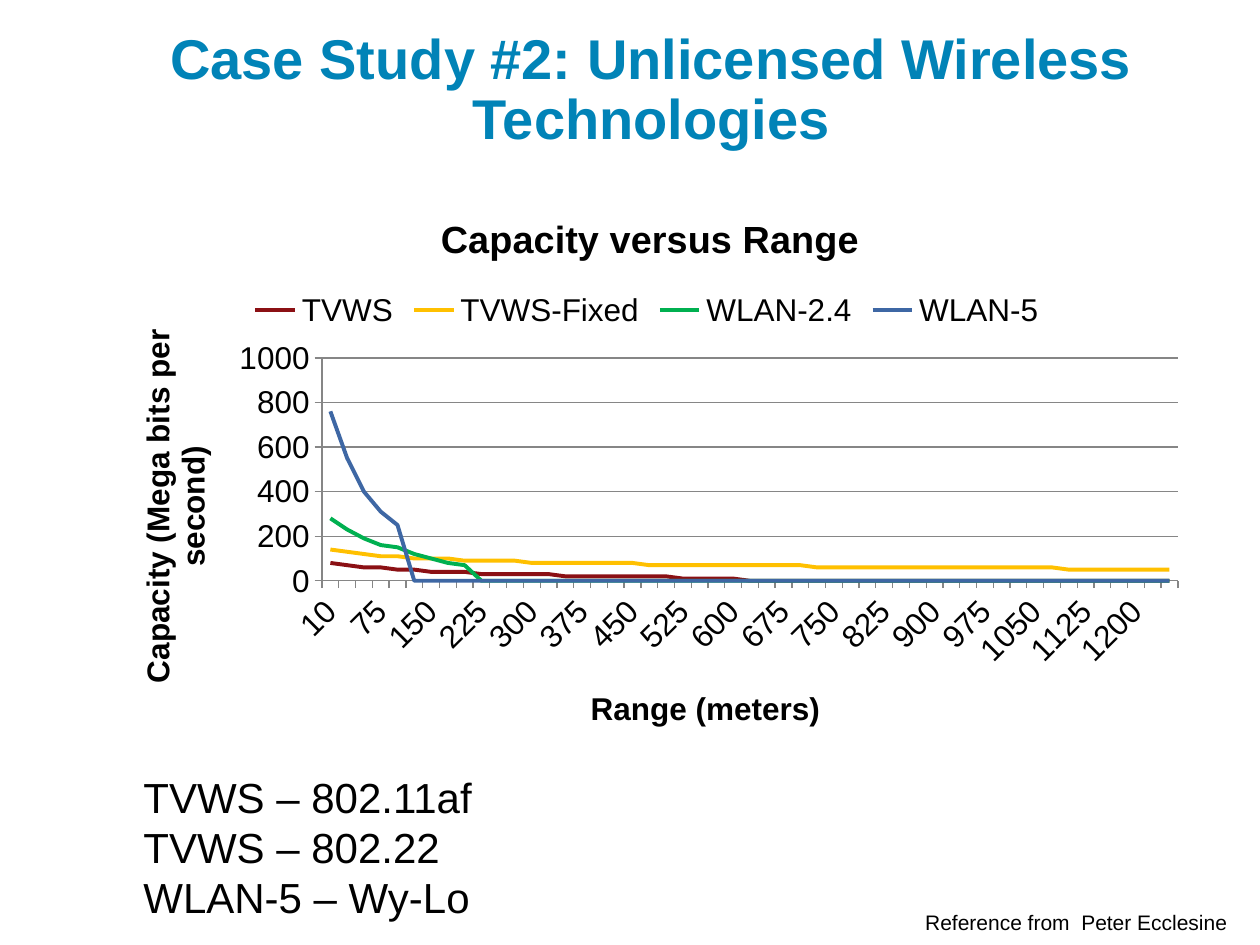
from dataclasses import dataclass

from lxml import etree
from pptx import Presentation
from pptx.chart.data import CategoryChartData
from pptx.dml.color import RGBColor
from pptx.enum.chart import XL_CHART_TYPE, XL_LEGEND_POSITION, XL_TICK_MARK
from pptx.enum.text import MSO_ANCHOR, MSO_AUTO_SIZE, PP_ALIGN
from pptx.oxml import parse_xml
from pptx.oxml.ns import qn
from pptx.util import Pt

LINE = XL_CHART_TYPE.LINE
TOP = XL_LEGEND_POSITION.TOP
OUT = XL_TICK_MARK.OUTSIDE
LEFT, CENTER = PP_ALIGN.LEFT, PP_ALIGN.CENTER
HIGH, LOW = MSO_ANCHOR.TOP, MSO_ANCHOR.BOTTOM
GROW, FIXED = MSO_AUTO_SIZE.SHAPE_TO_FIT_TEXT, MSO_AUTO_SIZE.NONE

DPI = 126
FONT = "Arial"
BLACK = "000000"
BLUE = "0183B7"
GRID = "868686"
STEPS = 51


@dataclass
class Label:
    box: tuple[int, int, int, int]
    text: str
    size: int
    color: str = BLACK
    bold: bool = False
    align: PP_ALIGN = LEFT
    anchor: MSO_ANCHOR = HIGH
    wrap: bool = False
    pitch: float = 1.0


@dataclass
class Curve:
    name: str
    color: str
    vals: list[int]


LABELS = [
    Label((90, 42, 1123, 116), "Case Study #2: Unlicensed Wireless Technologies",
          32, BLUE, True, CENTER, LOW, True, 0.9),
    Label((131, 765, 357, 165), "TVWS – 802.11af\nTVWS – 802.22\nWLAN-5 – Wy-Lo", 24),
    Label((907, 903, 336, 38), " Reference from  Peter Ecclesine", 12),
]

CURVES = [
    Curve("TVWS", "8B1014", [80, 70, 60, 60, 50, 50] + [40] * 3 + [30] * 5
          + [20] * 7 + [10] * 4),
    Curve("TVWS-Fixed", "FFC000", [140, 130, 120, 110, 110] + [100] * 3 + [90] * 4
          + [80] * 7 + [70] * 10 + [60] * 15 + [50] * 7),
    Curve("WLAN-2.4", "00B050", [280, 230, 190, 160, 150, 120, 100, 80, 70]),
    Curve("WLAN-5", "3E67A4", [760, 550, 400, 310, 250]),
]

CHART = (106, 190, 1094, 566)


def px(n: int) -> int:
    return round(n * 914400 / DPI)


def rgb(code: str) -> RGBColor:
    return RGBColor.from_string(code)


def style(font, size: float, color: str = BLACK, bold: bool = False) -> None:
    font.name, font.size, font.bold = FONT, Pt(size), bold
    font.color.rgb = rgb(color)


def draw_label(slide, item: Label) -> None:
    frame = slide.shapes.add_textbox(*map(px, item.box)).text_frame
    frame.text = item.text
    frame.word_wrap = item.wrap
    frame.auto_size = FIXED if item.wrap else GROW
    frame.vertical_anchor = item.anchor
    for para in frame.paragraphs:
        para.alignment, para.line_spacing = item.align, item.pitch
        for run in para.runs:
            style(run.font, item.size, item.color, item.bold)


def pin(node, left: int, top: int, wide: int = 0, high: int = 0,
        inner: bool = False) -> None:
    for old in node.findall(qn("c:layout")):
        node.remove(old)
    x0, y0, full, tall = CHART
    spot = etree.Element(qn("c:layout"))
    form = etree.SubElement(spot, qn("c:manualLayout"))
    pairs = [("layoutTarget", "inner")] if inner else []
    pairs += [("xMode", "edge"), ("yMode", "edge"),
              ("x", (left - x0) / full), ("y", (top - y0) / tall)]
    if wide:
        pairs += [("w", wide / full), ("h", high / tall)]
    for tag, val in pairs:
        etree.SubElement(form, qn(f"c:{tag}")).set("val", str(val))
    lead = node[0].tag in (qn("c:tx"), qn("c:legendPos"))
    node.insert(1 if lead else 0, parse_xml(etree.tostring(spot)))


def put_title(owner, text: str, size: float) -> None:
    owner.text_frame.text = text
    style(owner.text_frame.paragraphs[0].runs[0].font, size, bold=True)


def draw_chart(slide) -> None:
    data = CategoryChartData()
    data.categories = ["10"] + [str(25 * i) for i in range(1, STEPS)]
    for curve in CURVES:
        data.add_series(curve.name, curve.vals + [0] * (STEPS - len(curve.vals)))
    chart = slide.shapes.add_chart(LINE, *map(px, CHART), data).chart
    style(chart.font, 18)
    put_title(chart.chart_title, "Capacity versus Range", 21.6)
    chart.has_legend = True
    chart.legend.position = TOP
    chart.legend.include_in_layout = False
    style(chart.legend.font, 18)
    chart.plots[0].vary_by_categories = False
    for line, curve in zip(chart.plots[0].series, CURVES):
        line.smooth = False
        line.format.line.width = Pt(2.25)
        line.format.line.color.rgb = rgb(curve.color)

    base, side = chart.category_axis, chart.value_axis
    for axis, text in ((base, "Range (meters)"),
                       (side, "Capacity (Mega bits per second)")):
        put_title(axis.axis_title, text, 18)
        axis.major_tick_mark = OUT
        axis.format.line.color.rgb = rgb(GRID)
        style(axis.tick_labels.font, 18)
    base.has_major_gridlines = False
    side.minimum_scale, side.maximum_scale, side.major_unit = 0, 1000, 200
    side.major_gridlines.format.line.color.rgb = rgb(GRID)

    root = chart.element
    pin(root.xpath("c:chart/c:title")[0], 434, 208)
    pin(root.xpath(".//c:legend")[0], 245, 286)
    pin(root.xpath(".//c:plotArea")[0], 322, 358, 856, 223, True)
    pin(root.xpath(".//c:catAx/c:title")[0], 585, 682)
    pin(root.xpath(".//c:valAx/c:title")[0], 131, 324)


def main() -> None:
    deck = Presentation()
    deck.slide_width, deck.slide_height = px(1260), px(945)
    slide = deck.slides.add_slide(deck.slide_layouts[6])
    for item in LABELS:
        draw_label(slide, item)
    draw_chart(slide)
    deck.save("out.pptx")


if __name__ == "__main__":
    main()
